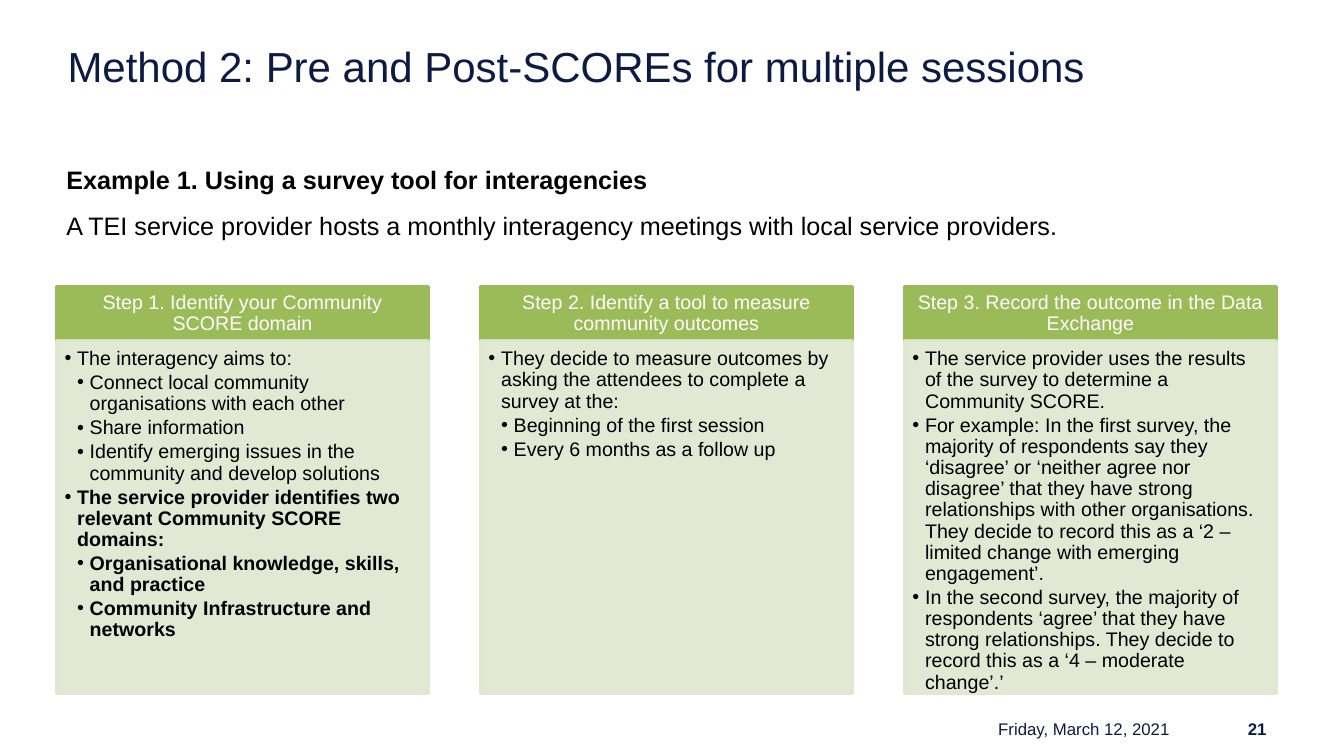
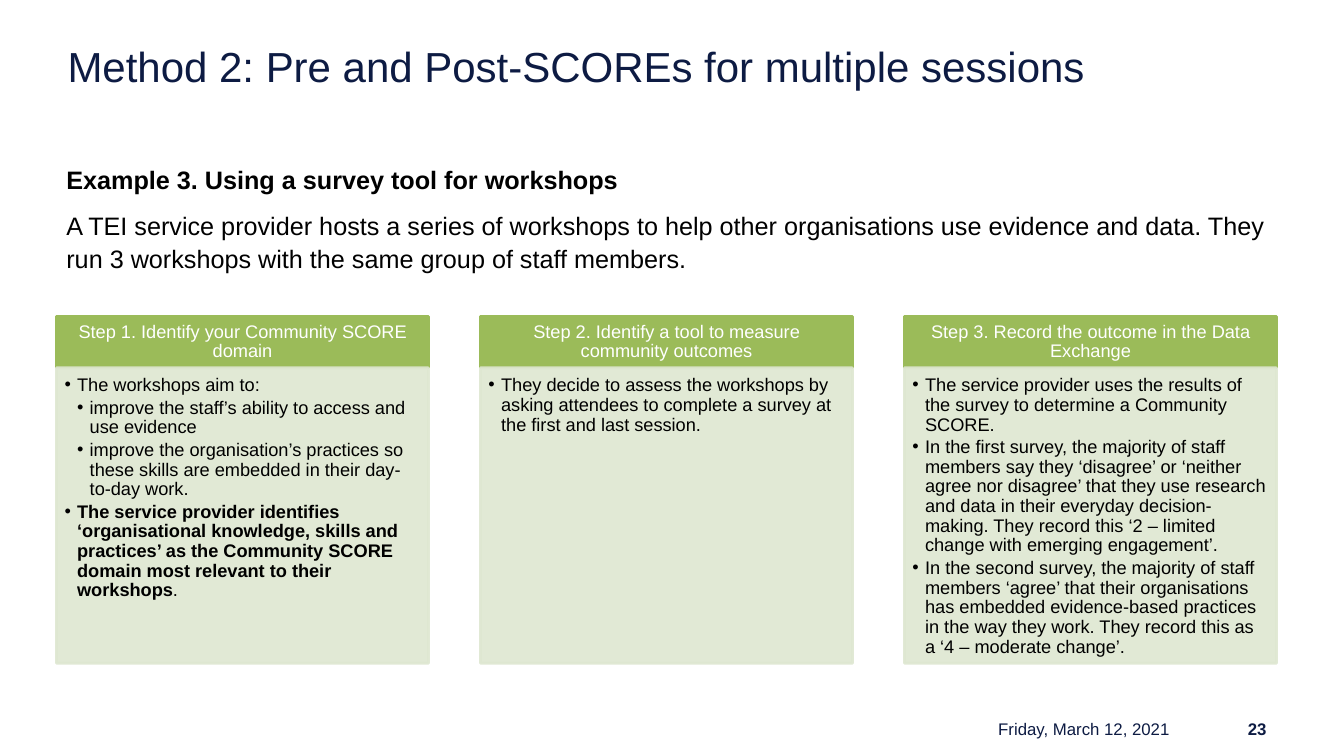
from dataclasses import dataclass
from typing import Optional

from lxml import etree
from pptx import Presentation
from pptx.dml.color import RGBColor
from pptx.enum.shapes import MSO_SHAPE
from pptx.enum.text import MSO_ANCHOR, PP_ALIGN
from pptx.oxml.ns import qn
from pptx.util import Inches, Pt

RECTANGLE = MSO_SHAPE.RECTANGLE
TOP, MIDDLE = MSO_ANCHOR.TOP, MSO_ANCHOR.MIDDLE
LEFT, CENTER, RIGHT = PP_ALIGN.LEFT, PP_ALIGN.CENTER, PP_ALIGN.RIGHT

FONT = "Arial"
NAVY, BLACK, WHITE = "0D1B43", "000000", "FFFFFF"
GREEN, PALE_GREEN = "9BBB59", "DEE7D1"
BODY_OPACITY = 90

TITLE = "Method 2: Pre and Post-SCOREs for multiple sessions"
DATE = "Friday, March 12, 2021"
STEP_HEADINGS = (
    "Step 1. Identify your Community SCORE domain",
    "Step 2. Identify a tool to measure community outcomes",
    "Step 3. Record the outcome in the Data Exchange",
)
COLUMNS_LEFT, COLUMNS_RIGHT, COLUMN_WIDTH = 0.56, 12.66, 3.69
COLUMN_GAP = (COLUMNS_RIGHT - COLUMNS_LEFT - COLUMN_WIDTH * len(STEP_HEADINGS)) / (len(STEP_HEADINGS) - 1)
BULLET_INDENT = 0.125
DEFAULT_MARGINS = (0.1, 0.05, 0.1, 0.05)


@dataclass(frozen=True)
class Item:
    """A paragraph; level 0 has no bullet, and plain_end is never bold."""
    text: str
    level: int = 0
    bold: bool = False
    plain_end: str = ""


@dataclass(frozen=True)
class Example:
    number: str
    heading: str
    summary: str
    summary_height: float
    steps_top: float
    header_height: float
    body_height: float
    text_size: int
    side_margin: float
    steps: tuple[tuple[Item, ...], ...]


EXAMPLES = (
    Example(
        "21", "Example 1. Using a survey tool for interagencies",
        "A TEI service provider hosts a monthly interagency meetings with local service providers.",
        0.4, 2.84, 0.54, 3.5, 14, 0.11,
        (
            (
                Item("The interagency aims to:", 1),
                Item("Connect local community organisations with each other", 2),
                Item("Share information", 2),
                Item("Identify emerging issues in the community and develop solutions", 2),
                Item("The service provider identifies two relevant Community SCORE domains:", 1, True),
                Item("Organisational knowledge, skills, and practice", 2, True),
                Item("Community Infrastructure and networks", 2, True),
            ),
            (
                Item("They decide to measure outcomes by asking the attendees to complete "
                     "a survey at the:", 1),
                Item("Beginning of the first session", 2),
                Item("Every 6 months as a follow up", 2),
            ),
            (
                Item("The service provider uses the results of the survey to determine "
                     "a Community SCORE.", 1),
                Item("For example: In the first survey, the majority of respondents say they "
                     "‘disagree’ or ‘neither agree nor disagree’ that they have strong "
                     "relationships with other organisations. They decide to record this as a "
                     "‘2 – limited change with emerging engagement’.", 1),
                Item("In the second survey, the majority of respondents ‘agree’ that they have "
                     "strong relationships. They decide to record this as a ‘4 – moderate "
                     "change’.’", 1),
            ),
        ),
    ),
    Example(
        "23", "Example 3. Using a survey tool for workshops",
        "A TEI service provider hosts a series of workshops to help other organisations use "
        "evidence and data. They run 3 workshops with the same group of staff members.",
        0.75, 3.14, 0.51, 2.93, 13, 0.1,
        (
            (
                Item("The workshops aim to:", 1),
                Item("improve the staff’s ability to access and use evidence", 2),
                Item("improve the organisation’s practices so these skills are embedded in "
                     "their day-to-day work.", 2),
                Item("The service provider identifies ‘organisational knowledge, skills and "
                     "practices’ as the Community SCORE domain most relevant to their workshops",
                     1, True, "."),
            ),
            (
                Item("They decide to assess the workshops by asking attendees to complete "
                     "a survey at the first and last session.", 1),
            ),
            (
                Item("The service provider uses the results of the survey to determine "
                     "a Community SCORE.", 1),
                Item("In the first survey, the majority of staff members say they ‘disagree’ or "
                     "‘neither agree nor disagree’ that they use research and data in their "
                     "everyday decision-making. They record this ‘2 – limited change with "
                     "emerging engagement’.", 1),
                Item("In the second survey, the majority of staff members ‘agree’ that their "
                     "organisations has embedded evidence-based practices in the way they work. "
                     "They record this as a ‘4 – moderate change’.", 1),
            ),
        ),
    ),
)


def rgb(color: str) -> RGBColor:
    return RGBColor.from_string(color)


def add_bullet(paragraph, level: int) -> None:
    paragraph.level = level - 1
    properties = paragraph._p.get_or_add_pPr()
    properties.set("marL", str(Inches(BULLET_INDENT * level)))
    properties.set("indent", str(-Inches(BULLET_INDENT)))
    etree.SubElement(properties, qn("a:buFont")).set("typeface", FONT)
    etree.SubElement(properties, qn("a:buChar")).set("char", "•")


def write_text(shape, items: tuple[Item, ...], *, size: int, color: str, align=LEFT, anchor=TOP,
               margins: tuple[float, ...] = DEFAULT_MARGINS,
               line_spacing: Optional[float] = None, space_after: float = 0) -> None:
    frame = shape.text_frame
    frame.word_wrap = True
    frame.vertical_anchor = anchor
    frame.margin_left, frame.margin_top, frame.margin_right, frame.margin_bottom = map(Inches, margins)
    for index, item in enumerate(items):
        paragraph = frame.add_paragraph() if index else frame.paragraphs[0]
        if item.level:
            add_bullet(paragraph, item.level)
        paragraph.alignment = align
        paragraph.line_spacing = line_spacing
        paragraph.space_after = Pt(space_after)
        for text, bold in ((item.text, item.bold), (item.plain_end, False)):
            if text:
                run = paragraph.add_run()
                run.text = text
                run.font.name = FONT
                run.font.size = Pt(size)
                run.font.bold = bold
                run.font.color.rgb = rgb(color)


def add_label(slide, box: tuple[float, ...], item: Item, **text_format) -> None:
    write_text(slide.shapes.add_textbox(*map(Inches, box)), (item,), **text_format)


def add_panel(slide, box: tuple[float, ...], color: str, opacity: int = 100):
    """Add a rectangle whose fill and outline share a colour and an opacity in percent."""
    shape = slide.shapes.add_shape(RECTANGLE, *map(Inches, box))
    shape.shadow.inherit = False
    shape.line.width = Pt(2)
    shape.fill.solid()
    shape.line.fill.solid()
    for fill in (shape.fill, shape.line.fill):
        fill.fore_color.rgb = rgb(color)
    if opacity < 100:
        for color_element in shape._element.spPr.iter(qn("a:srgbClr")):
            etree.SubElement(color_element, qn("a:alpha")).set("val", str(opacity * 1000))
    return shape


def add_title_and_footer(slide, number: str) -> None:
    add_label(slide, (0.67, 0.4, 12, 0.66), Item(TITLE), size=30, color=NAVY, margins=(0, 0, 0, 0))
    footer_format = {"size": 12, "color": NAVY, "align": RIGHT, "anchor": MIDDLE}
    add_label(slide, (11.57, 7.12, 1.09, 0.23), Item(number, bold=True), **footer_format)
    add_label(slide, (8.59, 7.12, 3.11, 0.23), Item(DATE), **footer_format)


def add_steps(slide, example: Example) -> None:
    side = example.side_margin
    body_top = example.steps_top + example.header_height
    for index, (heading, items) in enumerate(zip(STEP_HEADINGS, example.steps)):
        left = COLUMNS_LEFT + index * (COLUMN_WIDTH + COLUMN_GAP)
        header = add_panel(slide, (left, example.steps_top, COLUMN_WIDTH, example.header_height), GREEN)
        write_text(header, (Item(heading),), size=example.text_size, color=WHITE, align=CENTER,
                   anchor=MIDDLE, margins=(side, 0.06, side, 0.06), line_spacing=0.9)
        body = add_panel(slide, (left, body_top, COLUMN_WIDTH, example.body_height),
                         PALE_GREEN, BODY_OPACITY)
        write_text(body, items, size=example.text_size, color=BLACK,
                   margins=(0.08, 0.08, side, side + 0.01), line_spacing=0.9, space_after=2)


def add_example_slide(presentation, example: Example) -> None:
    slide = presentation.slides.add_slide(presentation.slide_layouts[6])
    add_title_and_footer(slide, example.number)
    add_label(slide, (0.56, 1.58, 8.4, 0.4), Item(example.heading, bold=True), size=18, color=BLACK)
    add_label(slide, (0.56, 2.02, 12.11, example.summary_height), Item(example.summary),
              size=18, color=BLACK, line_spacing=1.07)
    add_steps(slide, example)


def main() -> None:
    presentation = Presentation()
    presentation.slide_width = Inches(13.33)
    presentation.slide_height = Inches(7.5)
    for example in EXAMPLES:
        add_example_slide(presentation, example)
    presentation.save("out.pptx")


if __name__ == "__main__":
    main()
